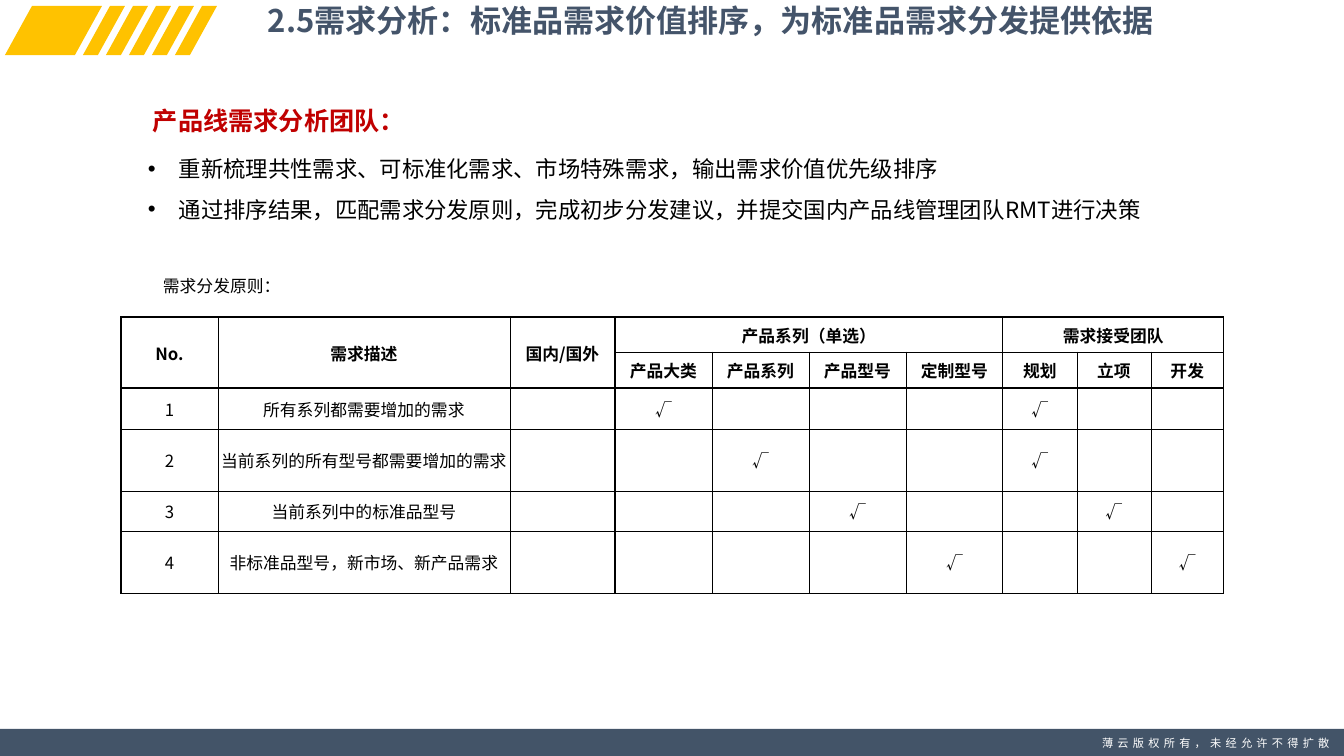
"""Build the slide on ranking standard-product requirements."""
from lxml import etree
from pptx import Presentation
from pptx.dml.color import RGBColor
from pptx.enum.shapes import MSO_SHAPE
from pptx.enum.text import MSO_ANCHOR, PP_ALIGN
from pptx.oxml.ns import qn
from pptx.util import Emu, Pt

CENTER, LEFT = PP_ALIGN.CENTER, PP_ALIGN.LEFT
MIDDLE = MSO_ANCHOR.MIDDLE
RECTANGLE = MSO_SHAPE.RECTANGLE
FONT = "Noto Sans CJK SC"
EMU_PER_PX = 914400 / 100.8
BLACK, WHITE, RED = "000000", "FFFFFF", "C00000"
YELLOW, SLATE, TITLE_COLOR = "FFC200", "435468", "44546A"

TITLE = "2.5需求分析：标准品需求价值排序，为标准品需求分发提供依据"
TEAM = "产品线需求分析团队："
TASKS = [
    "重新梳理共性需求、可标准化需求、市场特殊需求，输出需求价值优先级排序",
    "通过排序结果，匹配需求分发原则，完成初步分发建议，并提交国内产品线管理团队RMT进行决策",
]
PRINCIPLE = "需求分发原则："
COPYRIGHT = "薄云版权所有，未经允许不得扩散"

COLUMN_WIDTHS = [97, 292, 105, 97, 97, 97, 97, 74, 74, 73]
ROW_HEIGHTS = [35, 36, 41, 62, 40, 62]
HEADER_ROWS = 2
MERGES = [(0, 0, 1, 0), (0, 1, 1, 1), (0, 2, 1, 2), (0, 3, 0, 6), (0, 7, 0, 9)]
TABLE_ROWS = [
    ["No.", "需求描述", "国内/国外", "产品系列（单选）", "", "", "", "需求接受团队", "", ""],
    ["", "", "", "产品大类", "产品系列", "产品型号", "定制型号", "规划", "立项", "开发"],
    ["1", "所有系列都需要增加的需求", "", "√", "", "", "", "√", "", ""],
    ["2", "当前系列的所有型号都需要增加的需求", "", "", "√", "", "", "√", "", ""],
    ["3", "当前系列中的标准品型号", "", "", "", "√", "", "", "√", ""],
    ["4", "非标准品型号，新市场、新产品需求", "", "", "", "", "√", "", "", "√"],
]
THIN_LINE = 0.5
ROW_LINES = {0: 1, HEADER_ROWS: 2}
COLUMN_LINES = {0: 1, 3: 1, 7: 1, 10: 1}


def px(length):
    return Emu(round(length * EMU_PER_PX))


def color(value):
    return RGBColor.from_string(value)


def add_run(paragraph, text, size, fill, bold=False, spacing=0):
    run = paragraph.add_run()
    run.text = text
    run.font.size, run.font.bold, run.font.name = Pt(size), bold, FONT
    run.font.color.rgb = color(fill)
    properties = run.font._element
    etree.SubElement(properties, qn("a:ea")).set("typeface", FONT)
    if spacing:
        properties.set("spc", str(spacing * 100))


def add_text(slide, box, lines, size, fill, bold=False, align=LEFT, wrap=True,
             top_inset=5, line_spacing=None, bullet=False, spacing=0):
    frame = slide.shapes.add_textbox(*map(px, box)).text_frame
    frame.word_wrap = wrap
    frame.margin_top = px(top_inset)
    for index, line in enumerate(lines):
        paragraph = frame.add_paragraph() if index else frame.paragraphs[0]
        paragraph.alignment = align
        if line_spacing:
            paragraph.line_spacing = line_spacing
        if bullet:
            properties = paragraph._p.get_or_add_pPr()
            properties.set("marL", str(px(31)))
            properties.set("indent", str(-px(31)))
            etree.SubElement(properties, qn("a:buFont")).set("typeface", "Arial")
            etree.SubElement(properties, qn("a:buChar")).set("char", "•")
        add_run(paragraph, line, size, fill, bold, spacing)


def paint(shape, fill):
    shape.shadow.inherit = False
    shape.fill.solid()
    shape.fill.fore_color.rgb = color(fill)
    shape.line.fill.background()


def add_stripe(slide, left, width, top=6, bottom=55, slant=27):
    builder = slide.shapes.build_freeform(left + slant, top, scale=EMU_PER_PX)
    builder.add_line_segments([(left + slant + width, top), (left + width, bottom), (left, bottom)])
    paint(builder.convert_to_shape(), YELLOW)


def set_borders(cell, row, column):
    bottom = row + (cell.span_height if cell.is_merge_origin else 1)
    right = column + (cell.span_width if cell.is_merge_origin else 1)
    widths = {
        "a:lnL": COLUMN_LINES.get(column, THIN_LINE),
        "a:lnR": COLUMN_LINES.get(right, THIN_LINE),
        "a:lnT": ROW_LINES.get(row, THIN_LINE),
        "a:lnB": ROW_LINES.get(bottom, THIN_LINE),
    }
    properties = cell._tc.get_or_add_tcPr()
    for tag, width in widths.items():
        line = etree.SubElement(properties, qn(tag), w=str(Pt(width)))
        solid = etree.SubElement(line, qn("a:solidFill"))
        etree.SubElement(solid, qn("a:srgbClr"), val=BLACK)


def add_principle_table(slide, left, top):
    size = sum(COLUMN_WIDTHS), sum(ROW_HEIGHTS)
    table = slide.shapes.add_table(len(ROW_HEIGHTS), len(COLUMN_WIDTHS),
                                   *map(px, (left, top, *size))).table
    table.first_row = table.horz_banding = False
    for column, width in zip(table.columns, COLUMN_WIDTHS):
        column.width = px(width)
    for row, height in zip(table.rows, ROW_HEIGHTS):
        row.height = px(height)
    for top_row, first, bottom_row, last in MERGES:
        table.cell(top_row, first).merge(table.cell(bottom_row, last))
    for row, texts in enumerate(TABLE_ROWS):
        for column, text in enumerate(texts):
            cell = table.cell(row, column)
            cell.vertical_anchor = MIDDLE
            cell.margin_left = cell.margin_right = cell.margin_top = px(1)
            cell.margin_bottom = 0
            if not cell.is_spanned:
                set_borders(cell, row, column)
            cell.fill.background()
            paragraph = cell.text_frame.paragraphs[0]
            paragraph.alignment = CENTER
            paragraph.font.size = Pt(12)
            if text:
                add_run(paragraph, text, 12, BLACK, row < HEADER_ROWS)


def main():
    presentation = Presentation()
    presentation.slide_width, presentation.slide_height = px(1344), px(756)
    slide = presentation.slides.add_slide(presentation.slide_layouts[6])
    for index in range(5):
        add_stripe(slide, 83 + 23 * index, 15)
    add_stripe(slide, 5, 70)
    paint(slide.shapes.add_shape(RECTANGLE, *map(px, (0, 729, 1344, 27))), SLATE)
    add_text(slide, (1090, 731, 252, 24), [COPYRIGHT], 8, WHITE,
             align=CENTER, wrap=False, spacing=3)
    add_text(slide, (258, 6, 919, 56), [TITLE], 22.2, TITLE_COLOR, bold=True,
             top_inset=0, line_spacing=0.9)
    add_text(slide, (138, 137, 1059, 92), TASKS, 16, BLACK, line_spacing=1.5, bullet=True)
    add_text(slide, (143, 100, 272, 40), [TEAM], 18, RED, bold=True, wrap=False)
    add_principle_table(slide, 121, 317)
    add_text(slide, (153, 271, 283, 30), [PRINCIPLE], 12, BLACK)
    presentation.save("out.pptx")


if __name__ == "__main__":
    main()
